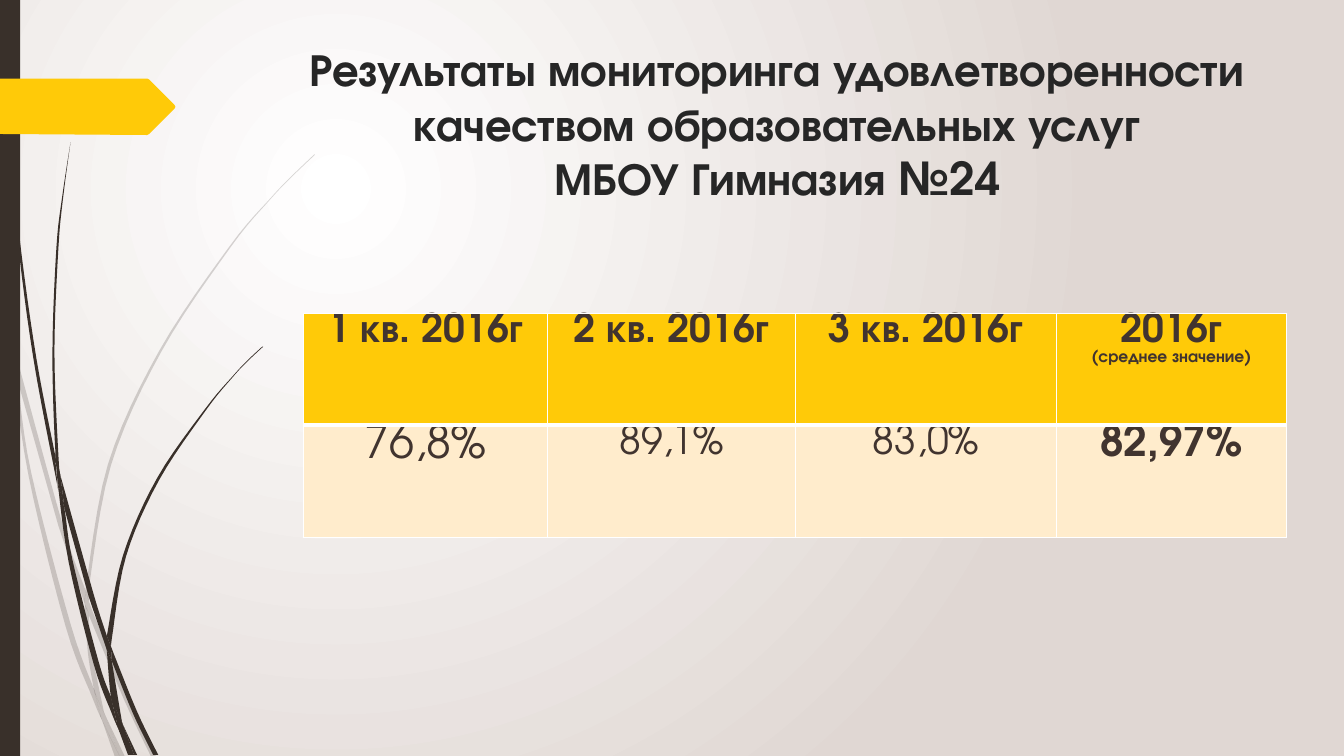
from pptx import Presentation
from pptx.dml.color import RGBColor
from pptx.enum.shapes import MSO_SHAPE
from pptx.enum.text import MSO_ANCHOR, PP_ALIGN
from pptx.oxml.ns import qn
from pptx.util import Pt
from lxml import etree

RECTANGLE = MSO_SHAPE.RECTANGLE
CENTER, TOP = PP_ALIGN.CENTER, MSO_ANCHOR.TOP
PX = 9144  # 100 px to the inch
PAGE_SIZE = (1333, 750)

THEME = {
    "font": "TeX Gyre Adventor",
    "dark": "39302A", "accent": "FFCA08", "cell": "FFECCC", "white": "FFFFFF",
    "edge": "E0D7D3", "title": "262626", "text": "41342F",
    "title_size": 32.4, "head_size": 28, "note_size": 12,
    "thin": 1, "thick": 3, "pale_alpha": 20,
}

TITLE = ("Результаты мониторинга удовлетворенности качеством образовательных услуг"
         "\vМБОУ Гимназия №24")
TITLE_BOX = (243, 36, 1056, 140)
HEADERS = ["1 кв. 2016г", "2 кв. 2016г", "3 кв. 2016г", "2016г\n(среднее значение)"]
VALUES = [("76,8%", 32, False), ("89,1%", 28, False), ("83,0%", 28, False), ("82,97%", 30, True)]
TABLE_LEFT, TABLE_TOP, ROW_HEIGHT = 301, 311, 111
COLUMN_WIDTHS = [242, 246, 259, 228]

SIDE_BAR = (0, 0, 20, 750)
POINTER = [[(0, 78), (146, 78)], [(148, 79), (173, 104)], [(174, 106), (173, 108)],
           [(148, 133), (146, 134)], [(0, 133), (0, 78)]]

# Each blade of grass is a list of edges; every edge is a smooth run of points.
PALE_GRASS = [
    [[(11, 350), (9, 322), (0, 282)], [(0, 299), (10, 344), (11, 350)]],
    [[(58, 522), (84, 599)], [(85, 586), (62, 520), (14, 345)], [(17, 376), (58, 522)]],
    [[(92, 607), (88, 596)], [(88, 610), (123, 694), (150, 751)],
     [(155, 751), (127, 692), (92, 607)]],
    [[(119, 751), (124, 751)], [(105, 711), (119, 751)]],
    [[(93, 683), (70, 619), (31, 469), (17, 376), (11, 350)],
     [(11, 350), (28, 470), (65, 621), (92, 693), (101, 714)], [(99, 707), (93, 683)]],
    [[(84, 599), (87, 646), (93, 683), (96, 692), (105, 711)],
     [(103, 706), (91, 646), (88, 610)], [(88, 608), (84, 599)]],
    [[(88, 584), (110, 462), (160, 349), (229, 245), (268, 198), (290, 175), (312, 154)],
     [(312, 153), (289, 175), (268, 197), (228, 244), (158, 348), (107, 461), (85, 584)],
     [(85, 586), (88, 596), (88, 584)]],
    [[(101, 714), (114, 751)], [(119, 751), (101, 714)]],
    [[(88, 608), (88, 610), (88, 596)], [(85, 586), (84, 599), (88, 608)]],
    [[(96, 692), (93, 683), (99, 707), (101, 714), (119, 751)], [(105, 711), (96, 692)]],
]
DARK_GRASS = [
    [[(7, 110), (17, 233), (33, 355), (56, 477), (57, 481)],
     [(55, 457), (55, 453), (36, 355), (19, 232), (8, 109), (5, 48), (4, 0)],
     [(3, 0), (4, 48), (7, 110)]],
    [[(88, 592), (106, 645)], [(106, 633), (106, 631), (93, 590), (60, 472)],
     [(64, 505), (88, 592)]],
    [[(113, 649), (110, 641)], [(111, 656), (132, 708), (152, 749)],
     [(157, 749), (136, 706), (113, 649)]],
    [[(110, 691), (98, 657), (72, 556), (64, 505), (57, 477)],
     [(57, 477), (68, 557), (93, 659), (111, 708), (117, 722)], [(116, 717), (110, 691)]],
    [[(60, 472), (58, 453), (54, 349), (58, 245), (63, 193), (70, 141)],
     [(70, 141), (62, 193), (56, 245), (52, 349), (55, 449), (60, 472)]],
    [[(133, 749), (136, 749)], [(122, 719), (133, 749)]],
    [[(57, 477), (64, 505)], [(60, 472), (55, 449)], [(55, 453), (57, 477)]],
    [[(111, 633), (125, 552), (158, 476), (205, 406), (231, 374), (245, 359), (261, 344)],
     [(260, 344), (245, 358), (231, 373), (204, 405), (156, 474), (122, 551), (106, 631)],
     [(110, 641), (111, 633)]],
    [[(117, 722), (127, 749)], [(131, 749), (117, 722)]],
    [[(106, 645), (110, 691), (116, 706), (122, 719)], [(121, 716), (111, 656)],
     [(109, 651), (106, 645)]],
    [[(106, 645), (109, 651), (111, 656)], [(110, 641), (106, 631)], [(106, 633), (106, 645)]],
    [[(116, 706), (110, 691)], [(116, 717), (117, 722), (130, 749)],
     [(133, 749), (122, 719), (116, 706)]],
]


def color(name):
    return RGBColor.from_string(THEME[name])


def px(values):
    return [value * PX for value in values]


def smooth(edge, steps=6):
    """Points of a Catmull-Rom curve that runs through the edge."""
    if len(edge) < 3:
        return edge
    padded = [edge[0], *edge, edge[-1]]
    points = [edge[0]]
    for a, b, c, d in zip(padded, padded[1:], padded[2:], padded[3:]):
        for step in range(1, steps + 1):
            t = step / steps
            points.append(tuple(
                (2 * q + (r - p) * t + (2 * p - 5 * q + 4 * r - s) * t ** 2
                 + (3 * q - p - 3 * r + s) * t ** 3) / 2
                for p, q, r, s in zip(a, b, c, d)))
    return points


def paint(shape, fill, alpha=None):
    shape.shadow.inherit = False
    shape.fill.solid()
    shape.fill.fore_color.rgb = color(fill)
    shape.line.fill.background()
    if alpha:
        tone = shape.fill._xPr.find(".//" + qn("a:srgbClr"))
        etree.SubElement(tone, qn("a:alpha"), val=str(alpha * 1000))


def add_outline(shapes, edges, fill, alpha=None):
    points = [px(point) for edge in edges for point in smooth(edge)]
    builder = shapes.build_freeform(*points[0])
    builder.add_line_segments(points[1:], close=True)
    paint(builder.convert_to_shape(), fill, alpha)


def style_paragraph(para, size, bold, ink):
    para.alignment = CENTER
    for span in para.runs:
        span.font.name = THEME["font"]
        span.font.size = Pt(size)
        span.font.bold = bold
        span.font.color.rgb = color(ink)


def set_background(page):
    fill = page.background.fill
    fill.gradient()
    for stop, name in zip(fill.gradient_stops, ("white", "edge")):
        stop.color.rgb = color(name)
    gradient = page.element.find(".//" + qn("a:gradFill"))
    gradient.remove(gradient.find(qn("a:lin")))
    circle = etree.SubElement(gradient, qn("a:path"), path="circle")
    etree.SubElement(circle, qn("a:fillToRect"), l="50000", t="50000", r="100000", b="100000")


def style_cell(cell, fill, bottom):
    cell.margin_top = cell.margin_bottom = 0
    cell.vertical_anchor = TOP
    properties = cell._tc.get_or_add_tcPr()
    widths = {"lnL": "thin", "lnR": "thin", "lnT": "thin", "lnB": bottom}
    for side, width in widths.items():
        line = etree.SubElement(properties, qn("a:" + side), w=str(Pt(THEME[width])))
        solid = etree.SubElement(line, qn("a:solidFill"))
        etree.SubElement(solid, qn("a:srgbClr"), val=THEME["white"])
    cell.fill.solid()
    cell.fill.fore_color.rgb = color(fill)


def add_results(page):
    frame = page.shapes.add_table(2, len(HEADERS), *px(
        (TABLE_LEFT, TABLE_TOP, sum(COLUMN_WIDTHS), 2 * ROW_HEIGHT)))
    table = frame.table
    for row in table.rows:
        row.height = ROW_HEIGHT * PX
    for index, (header, (value, size, bold)) in enumerate(zip(HEADERS, VALUES)):
        table.columns[index].width = COLUMN_WIDTHS[index] * PX
        head, body = table.cell(0, index), table.cell(1, index)
        head.text_frame.text, body.text_frame.text = header, value
        for para, name in zip(head.text_frame.paragraphs, ("head_size", "note_size")):
            style_paragraph(para, THEME[name], True, "text")
        style_paragraph(body.text_frame.paragraphs[0], size, bold, "text")
        style_cell(head, "accent", "thick")
        style_cell(body, "cell", "thin")


def main():
    deck = Presentation()
    deck.slide_width, deck.slide_height = px(PAGE_SIZE)
    page = deck.slides.add_slide(deck.slide_layouts[6])
    set_background(page)
    for blades, alpha in ((PALE_GRASS, THEME["pale_alpha"]), (DARK_GRASS, None)):
        group = page.shapes.add_group_shape()
        for blade in blades:
            add_outline(group.shapes, blade, "dark", alpha)
    paint(page.shapes.add_shape(RECTANGLE, *px(SIDE_BAR)), "dark")
    add_outline(page.shapes, POINTER, "accent")
    box = page.shapes.add_textbox(*px(TITLE_BOX))
    box.text_frame.word_wrap = True
    box.text_frame.vertical_anchor = TOP
    box.text_frame.text = TITLE
    para = box.text_frame.paragraphs[0]
    para.text = TITLE
    style_paragraph(para, THEME["title_size"], True, "title")
    add_results(page)
    deck.save("out.pptx")


if __name__ == "__main__":
    main()
